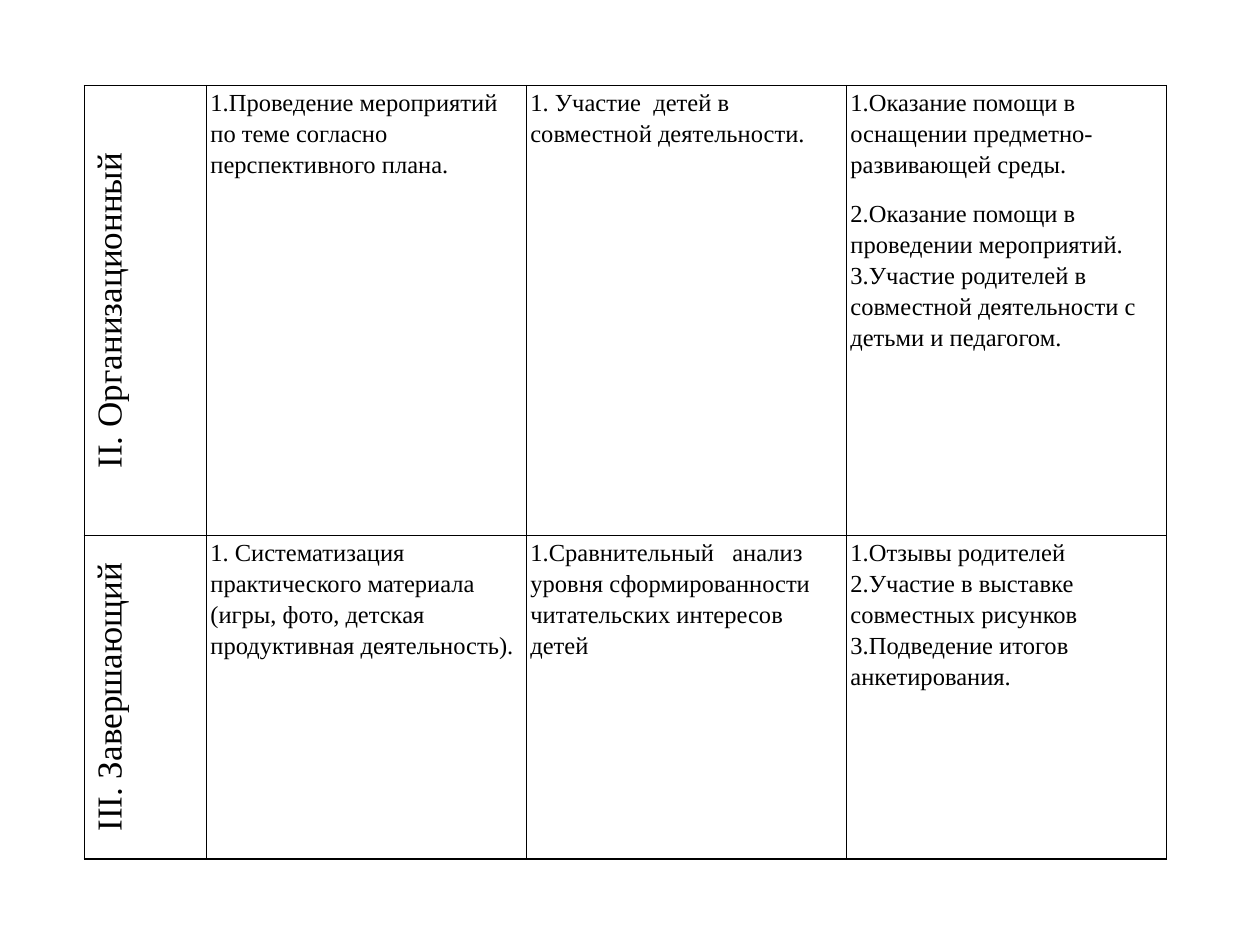
from pptx import Presentation
from pptx.dml.color import RGBColor
from pptx.enum.text import MSO_ANCHOR, PP_ALIGN
from pptx.oxml import parse_xml
from pptx.oxml.ns import nsdecls
from pptx.util import Inches, Pt

FONT = "Times New Roman"
BLACK = "000000"
COLUMNS = [0.97, 2.54, 2.54, 2.54]
ROWS = [3.57, 2.57]

# Each row: stage name, then one list of paragraphs per column
STAGES = [
    ("II. Организационный", [
        ["1.Проведение мероприятий по теме согласно перспективного плана."],
        ["1. Участие  детей в совместной деятельности."],
        ["1.Оказание помощи в оснащении предметно-развивающей среды.",
         "2.Оказание помощи в проведении мероприятий.",
         "3.Участие родителей в совместной деятельности с детьми и педагогом."],
    ]),
    ("III. Завершающий", [
        ["1. Систематизация практического материала "
         "(игры, фото, детская продуктивная деятельность)."],
        ["1.Сравнительный   анализ уровня сформированности "
         "читательских интересов детей"],
        ["1.Отзывы родителей",
         "2.Участие в выставке совместных рисунков",
         "3.Подведение итогов анкетирования."],
    ]),
]


def rgb(value):
    return RGBColor.from_string(value)


def add_text(p, text, size=14, color=BLACK, align=PP_ALIGN.LEFT, after=0):
    p.alignment = align
    p.line_spacing = 1.15
    p.space_after = Pt(after)
    r = p.add_run()
    r.text = text
    r.font.name = FONT
    r.font.size = Pt(size)
    r.font.color.rgb = rgb(color)


def set_borders(cell, color=BLACK, width=1):
    """Outline a cell; border elements must come before its fill."""
    tc_pr = cell._tc.get_or_add_tcPr()
    for i, side in enumerate("LRTB"):
        tc_pr.insert(i, parse_xml(
            f'<a:ln{side} {nsdecls("a")} w="{Pt(width)}"><a:solidFill>'
            f'<a:srgbClr val="{color}"/></a:solidFill></a:ln{side}>'))


def format_cell(cell):
    cell.margin_left = cell.margin_right = Inches(0.03)
    cell.margin_top = cell.margin_bottom = 0
    cell.fill.background()
    set_borders(cell)


def fill_stage_cell(cell, text):
    """Write a stage name that reads from bottom to top."""
    format_cell(cell)
    cell.vertical_anchor = MSO_ANCHOR.MIDDLE
    cell._tc.get_or_add_tcPr().set("vert", "vert270")
    add_text(cell.text_frame.paragraphs[0], text, size=20,
             align=PP_ALIGN.CENTER)


def fill_task_cell(cell, paragraphs, first_after=0):
    format_cell(cell)
    tf = cell.text_frame
    for i, text in enumerate(paragraphs):
        p = tf.add_paragraph() if i else tf.paragraphs[0]
        add_text(p, text, after=0 if i else first_after)


def add_stage_table(slide, left, top):
    table = slide.shapes.add_table(
        len(ROWS), len(COLUMNS), Inches(left), Inches(top),
        Inches(sum(COLUMNS)), Inches(sum(ROWS))).table
    table.first_row = table.horz_banding = False
    for column, width in zip(table.columns, COLUMNS):
        column.width = Inches(width)
    for row, height in zip(table.rows, ROWS):
        row.height = Inches(height)

    for i, (stage, tasks) in enumerate(STAGES):
        fill_stage_cell(table.cell(i, 0), stage)
        for j, paragraphs in enumerate(tasks, start=1):
            fill_task_cell(table.cell(i, j), paragraphs,
                           first_after=10 if (i, j) == (0, 3) else 0)


def main():
    prs = Presentation()
    prs.slide_width, prs.slide_height = Inches(10), Inches(7.5)
    slide = prs.slides.add_slide(prs.slide_layouts[6])
    add_stage_table(slide, 0.67, 0.68)
    prs.save("out.pptx")


if __name__ == "__main__":
    main()
